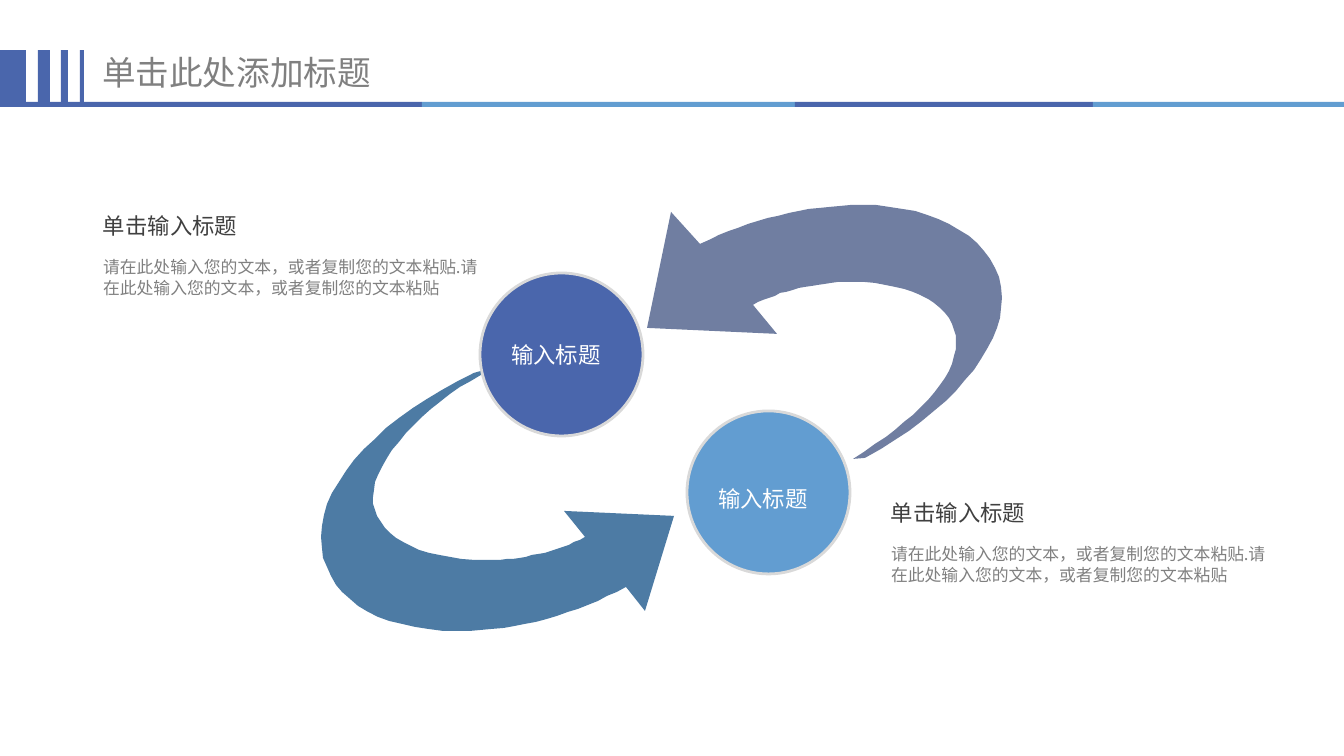
from pptx import Presentation
from pptx.dml.color import RGBColor
from pptx.enum.shapes import MSO_SHAPE as Geo
from pptx.enum.text import MSO_ANCHOR as Anchor, MSO_AUTO_SIZE as Fit, PP_ALIGN as Align
from pptx.util import Emu, Pt
from lxml import etree

SCALE = 914400 / 134.4
FONT = "Noto Sans CJK SC"
NS = "http://schemas.openxmlformats.org/drawingml/2006/main"
BLUE, SKY, GRAY, DARK = "4A66AC", "629DD1", "808080", "404040"
HEAD = "单击输入标题"
LABEL = "输入标题"
BODY = "请在此处输入您的文本，或者复制您的文本粘贴." \
       "请在此处输入您的文本，或者复制您的文本粘贴"


def px(n):
    return Emu(round(n * SCALE))


def color(code):
    return RGBColor.from_string(code)


def curve(a, b, c, d, steps=16):
    """Points along a cubic Bezier, without its start."""
    for i in range(1, steps + 1):
        t = i / steps
        u = 1 - t
        yield tuple(u**3 * p + 3 * u * u * t * q + 3 * u * t * t * r + t**3 * s
                    for p, q, r, s in zip(a, b, c, d))


class Deck:
    def __init__(self, wide, high):
        self.prs = Presentation()
        self.prs.slide_width, self.prs.slide_height = px(wide), px(high)
        self.slide = self.prs.slides.add_slide(self.prs.slide_layouts[5])
        self.shapes = self.slide.shapes

    def paint(self, shape, fill, line=None):
        shape.shadow.inherit = False
        shape.fill.solid()
        shape.fill.fore_color.rgb = color(fill)
        if line:
            shape.line.color.rgb = color(line)
            shape.line.width = Pt(1.5)
        else:
            shape.line.fill.background()

    def label(self, shape, text, size, ink, align=Align.LEFT, anchor=Anchor.TOP,
              pad=(13, 7), lead=None, gap=None):
        frame = shape.text_frame
        frame.word_wrap, frame.auto_size = True, Fit.NONE
        frame.vertical_anchor = anchor
        frame.margin_left = frame.margin_right = px(pad[0])
        frame.margin_top = frame.margin_bottom = px(pad[1])
        para = frame.paragraphs[0]
        para.text, para.alignment = text, align
        if lead:
            para.line_spacing = lead
        if gap:
            para.space_before = para.space_after = Pt(gap)
        font = para.font
        font.size, font.name = Pt(size), FONT
        font.color.rgb = color(ink)
        # East Asian glyphs take their own typeface
        props = para._p.pPr.find(f"{{{NS}}}defRPr")
        etree.SubElement(props, f"{{{NS}}}ea", typeface=FONT)

    def title(self, text, x, y, w, h):
        box = self.shapes.title
        box.left, box.top, box.width, box.height = map(px, (x, y, w, h))
        self.label(box, text, 18, GRAY, anchor=Anchor.MIDDLE, pad=(11, 5))

    def text(self, text, x, y, w, h, size, ink, **style):
        box = self.shapes.add_textbox(px(x), px(y), px(w), px(h))
        self.label(box, text, size, ink, **style)

    def bar(self, x, y, w, h, fill):
        self.paint(self.shapes.add_shape(Geo.RECTANGLE, px(x), px(y), px(w), px(h)), fill)

    def disc(self, x, y, size, fill):
        disc = self.shapes.add_shape(Geo.OVAL, px(x), px(y), px(size), px(size))
        self.paint(disc, fill, "D9D9D9")

    def arrow(self, start, parts, fill):
        """Each part is one point (a line) or three points (a curve)."""
        pen = self.shapes.build_freeform(*start, scale=SCALE)
        last = start
        for part in parts:
            pen.add_line_segments(list(curve(last, *part)) if len(part) == 3 else part,
                                  close=False)
            last = part[-1]
        pen.add_line_segments([start], close=True)
        self.paint(pen.convert_to_shape(), fill)

    def note(self, x, y):
        self.text(BODY, x, y + 57, 402, 128, 9, GRAY, pad=(13, 0), gap=8.4)
        self.text(HEAD, x, y, 423, 46, 12, DARK, anchor=Anchor.MIDDLE, lead=1.2)


def main():
    deck = Deck(1344, 756)

    # Header: title, stripes and rule
    deck.title("单击此处添加标题", 91, 47, 359, 51)
    for x, w in ((0, 26), (38, 12), (61, 7), (80, 4)):
        deck.bar(x, 50, w, 52, BLUE)
    edges = (0, 422, 795, 1093, 1344)
    for i, (left, right) in enumerate(zip(edges, edges[1:])):
        deck.bar(left, 102, right - left, 5, (BLUE, SKY)[i % 2])

    # Swirling arrows
    deck.arrow((853, 459), [
        [(865, 458)],
        [(950, 412), (1002, 350), (1002, 298)],
        [(1002, 240), (935, 205), (862, 205)],
        [(805, 205), (750, 220), (700, 244)],
        [(671, 212)], [(647, 328)], [(777, 334)], [(753, 305)],
        [(780, 291), (815, 282), (852, 282)],
        [(915, 282), (956, 308), (956, 342)],
        [(956, 380), (915, 420), (853, 459)],
    ], "707EA1")
    deck.arrow((481, 371), [
        [(474, 373)],
        [(385, 415), (321, 480), (321, 537)],
        [(321, 595), (375, 631), (458, 631)],
        [(520, 631), (577, 613), (626, 587)],
        [(645, 611)], [(674, 516)], [(564, 511)], [(585, 537)],
        [(557, 552), (522, 560), (487, 560)],
        [(415, 560), (373, 533), (373, 497)],
        [(373, 460), (425, 405), (481, 375)],
    ], "4D7BA4")

    # Labelled discs
    for x, y, drop, fill in ((687, 411, 62, SKY), (480, 273, 56, BLUE)):
        deck.disc(x, y, 163, fill)
        deck.text(LABEL, x - 18, y + drop, 188, 46, 12, "FFFFFF",
                  align=Align.CENTER, lead=1.2)

    # Notes
    for spot in ((878, 487), (90, 200)):
        deck.note(*spot)

    deck.prs.save("out.pptx")


if __name__ == "__main__":
    main()
